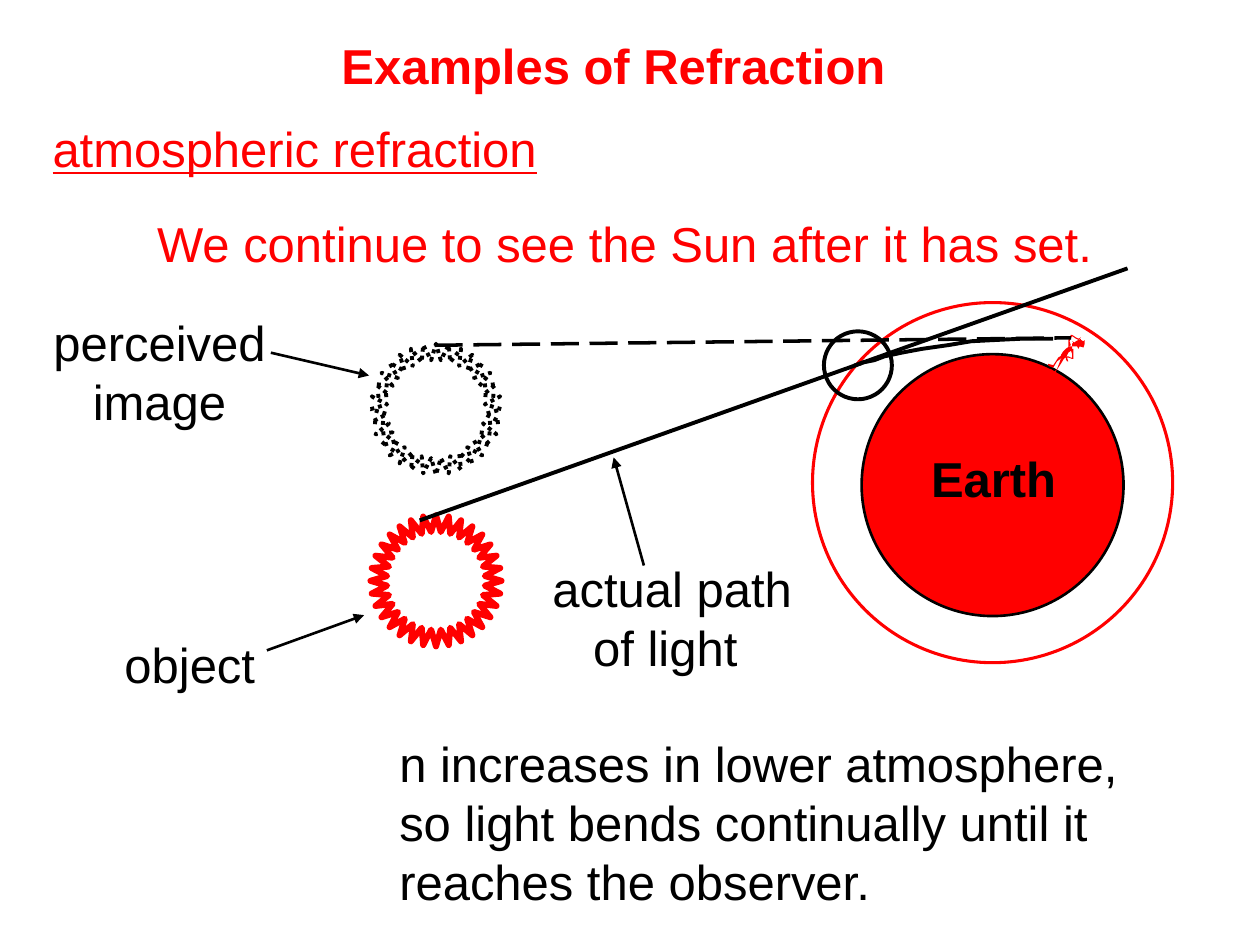
"""Build a slide that explains atmospheric refraction with the setting Sun."""
from lxml.etree import SubElement
from pptx import Presentation
from pptx.dml.color import RGBColor
from pptx.enum.dml import MSO_LINE
from pptx.enum.shapes import MSO_CONNECTOR, MSO_SHAPE
from pptx.enum.text import MSO_ANCHOR, MSO_AUTO_SIZE, PP_ALIGN
from pptx.oxml.ns import qn
from pptx.util import Cm, Pt

RED = RGBColor(0xFF, 0x00, 0x00)
BLACK = RGBColor(0x00, 0x00, 0x00)
WHITE = RGBColor(0xFF, 0xFF, 0xFF)

LIGHT_BEND = [(0, 28), (10, 26), (18, 23), (32, 20), (48, 17), (69, 14),
              (87, 11), (106, 10), (126, 9), (152, 9)]
OBSERVER = {
    "head": [(24, 11), (26, 10), (28, 10), (29, 11), (29, 12), (28, 14), (27, 15),
             (23, 15), (21, 15), (21, 13), (22, 12), (21, 11), (23, 12)],
    "body": [(19, 15), (21, 15), (21, 18), (18, 20), (16, 24), (14, 25), (12, 24),
             (12, 22), (14, 19), (16, 17)],
    "lower arm": [(21, 17), (22, 17), (22, 25), (21, 25), (18, 24), (17, 24),
                  (18, 27), (17, 27), (16, 25), (16, 23), (18, 23), (20, 24),
                  (21, 24), (21, 21), (20, 18)],
    "right leg": [(15, 23), (15, 24), (12, 29), (8, 35), (8, 37), (7, 37), (6, 35),
                  (3, 34), (3, 33), (4, 33), (7, 35), (9, 33), (11, 28), (12, 25),
                  (14, 23)],
    "left leg": [(13, 22), (13, 24), (9, 27), (6, 32), (3, 31), (2, 30), (2, 29),
                 (6, 30), (8, 27), (10, 24)],
    "hat": [(25, 13), (26, 10), (28, 9), (28, 10), (30, 11), (31, 10), (31, 13),
            (30, 16), (27, 15), (26, 17), (25, 15)],
    "upper arm": [(18, 16), (20, 14), (19, 11), (21, 7), (24, 9), (26, 10), (28, 8),
                  (26, 9), (24, 8), (21, 6), (20, 6), (18, 10)],
}


class Slide:
    """Hold the text style and the current slide, and draw each kind of element."""

    font, size = "Arial", Pt(28)
    unit = Cm(2.54) / 100

    def __init__(self, prs):
        """Start on a title-only slide."""
        self.s = prs.slides.add_slide(prs.slide_layouts[5])

    def fill_text(self, sp, text, color, bold=None, underline=None, align=PP_ALIGN.LEFT,
                  anchor=MSO_ANCHOR.MIDDLE, indent=None):
        """Fill a shape with unwrapped text and format its runs."""
        tf = sp.text_frame
        tf.text = text
        tf.word_wrap = False
        tf.auto_size = MSO_AUTO_SIZE.SHAPE_TO_FIT_TEXT
        tf.vertical_anchor = anchor
        for p in tf.paragraphs:
            p.alignment = align
            if indent:
                p._p.get_or_add_pPr().set("indent", str(indent))
            for r in p.runs:
                f = r.font
                f.name, f.size, f.bold, f.underline = self.font, self.size, bold, underline
                f.color.rgb = color

    def title(self, text, x, y, w, h):
        """Move and format the title placeholder."""
        sp = self.s.shapes.title
        sp.left, sp.top, sp.width, sp.height = Cm(x), Cm(y), Cm(w), Cm(h)
        self.fill_text(sp, text, RED, bold=True)

    def text(self, text, x, y, w, h=1.45, color=BLACK, **style):
        """Add a text box."""
        sp = self.s.shapes.add_textbox(Cm(x), Cm(y), Cm(w), Cm(h))
        self.fill_text(sp, text, color, **style)

    def paint(self, sp, fill, line, width, dash=None):
        """Set the fill and outline of a shape."""
        sp.shadow.inherit = False
        if fill is None:
            sp.fill.background()
        else:
            sp.fill.solid()
            sp.fill.fore_color.rgb = fill
        if line is None:
            sp.line.fill.background()
        else:
            sp.line.color.rgb, sp.line.width = line, Pt(width)
            if dash:
                sp.line.dash_style = dash

    def round(self, x, y, d, line, width, fill=None, kind=MSO_SHAPE.OVAL, dash=None):
        """Add a circle or a star in a square frame."""
        sp = self.s.shapes.add_shape(kind, Cm(x), Cm(y), Cm(d), Cm(d))
        self.paint(sp, fill, line, width, dash)
        return sp

    def star(self, x, y, line, width, dash=None):
        """Add a Sun star."""
        sp = self.round(x, y, 2.64, line, width, WHITE, MSO_SHAPE.STAR_32_POINT, dash)
        sp.adjustments[0] = 0.375

    def outline(self, points, x, y, fill=None, line=None, width=0):
        """Add a freeform, closed when it has a fill."""
        fb = self.s.shapes.build_freeform(*points[0], scale=self.unit)
        fb.add_line_segments(points[1:], close=fill is not None)
        self.paint(fb.convert_to_shape(Cm(x), Cm(y)), fill, line, width)

    def line(self, x1, y1, x2, y2, width=2.25, dash=None, arrow=False):
        """Add a straight line or an arrow."""
        c = self.s.shapes.add_connector(MSO_CONNECTOR.STRAIGHT,
                                        Cm(x1), Cm(y1), Cm(x2), Cm(y2))
        c.line.color.rgb, c.line.width = BLACK, Pt(width)
        if dash:
            c.line.dash_style = dash
        if arrow:
            SubElement(c.line._get_or_add_ln(), qn("a:tailEnd"), type="triangle")
        SubElement(c._element.spPr, qn("a:effectLst"))


def main():
    """Draw the slide and save it."""
    prs = Presentation()
    prs.slide_width, prs.slide_height = Cm(25.4), Cm(19.05)
    s = Slide(prs)

    s.title("Examples of Refraction", 6.63, 0.58, 11.51, 1.45)
    s.text("atmospheric refraction", 0.81, 2.26, 10.95, color=RED, underline=True)
    s.text("We continue to see the Sun after it has set.", 2.92, 4.17, 19.69, color=RED)

    s.round(16.38, 6.1, 7.26, RED, 1.75)
    s.round(17.37, 7.14, 5.28, BLACK, 1.5, fill=RED)
    s.star(7.47, 6.93, BLACK, 2.25, MSO_LINE.ROUND_DOT)
    s.star(7.47, 10.39, RED, 3.5)
    for points in OBSERVER.values():
        s.outline(points, 21.08, 6.6, fill=RED)

    s.line(8.76, 6.96, 21.59, 6.81, 2, MSO_LINE.LONG_DASH)
    s.line(8.46, 10.49, 17.37, 7.32)
    s.outline(LIGHT_BEND, 17.37, 6.6, line=BLACK, width=2.25)

    s.text("n increases in lower atmosphere,\nso light bends continually until it\n"
           "reaches the observer.", 7.04, 14.66, 15.95, 3.84,
           anchor=MSO_ANCHOR.TOP, indent=Cm(0.76))
    s.text("Earth", 18.52, 8.92, 3.05, bold=True, anchor=MSO_ANCHOR.TOP)

    s.line(5.46, 7.11, 7.44, 7.57, 1.5, arrow=True)
    s.text("perceived\nimage", 0.79, 6.17, 4.85, 2.64, align=PP_ALIGN.CENTER)
    s.line(5.38, 13.11, 7.34, 12.4, 1.5, arrow=True)
    s.text("object", 2.26, 12.65, 3.43)
    s.text("actual path\nof light ", 10.87, 11.13, 5.36, 2.62, align=PP_ALIGN.CENTER)
    s.line(12.98, 11.4, 12.37, 9.22, 1.5, arrow=True)

    s.round(16.61, 6.68, 1.37, BLACK, 2.25)
    s.line(17.22, 7.37, 22.73, 5.41)
    prs.save("out.pptx")


if __name__ == "__main__":
    main()
